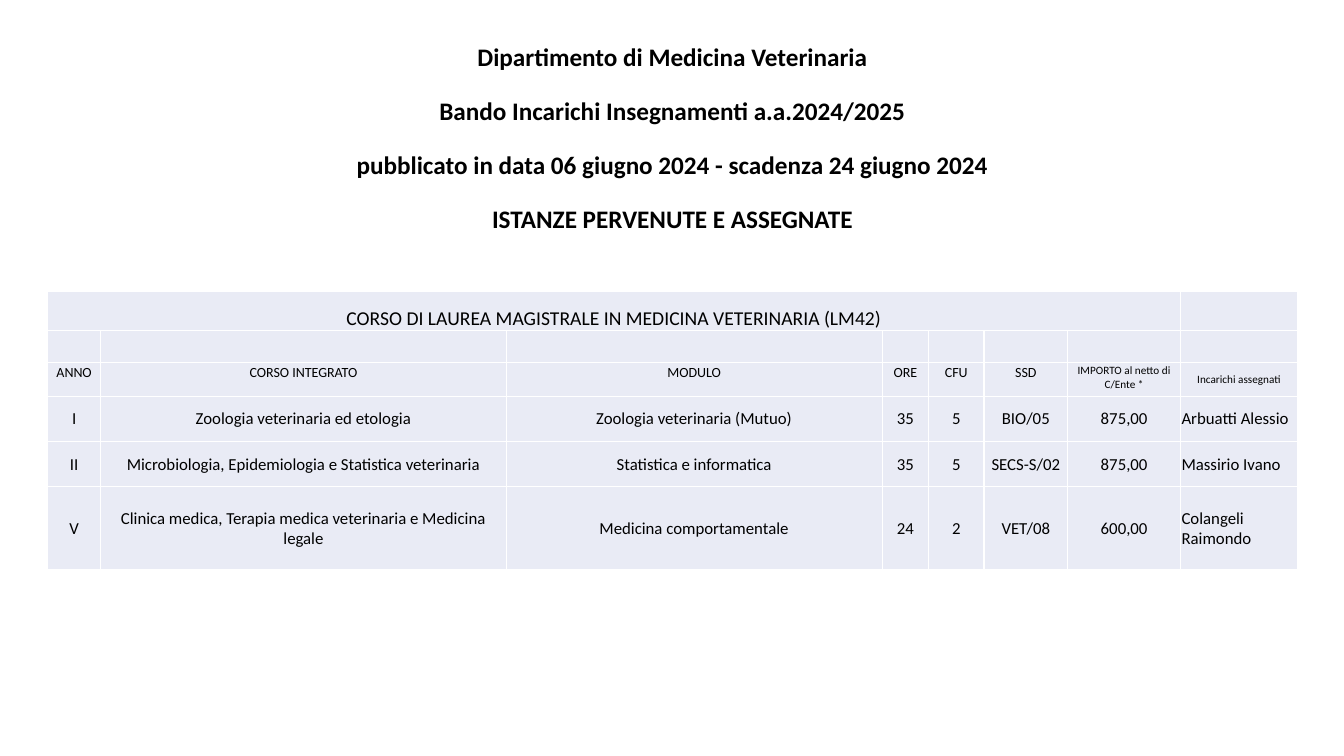
from lxml.etree import SubElement
from pptx import Presentation
from pptx.dml.color import RGBColor
from pptx.enum.text import MSO_ANCHOR, PP_ALIGN
from pptx.oxml import parse_xml
from pptx.oxml.ns import nsdecls, qn
from pptx.util import Inches, Pt

TITLE_LINES = [
    "Dipartimento di Medicina Veterinaria",
    "Bando Incarichi Insegnamenti a.a.2024/2025",
    "pubblicato in data 06 giugno 2024 - scadenza 24 giugno 2024",
    "ISTANZE PERVENUTE E ASSEGNATE",
]
COURSE = "CORSO DI LAUREA MAGISTRALE IN MEDICINA VETERINARIA (LM42)"
HEADINGS = ["ANNO", "CORSO INTEGRATO", "MODULO", "ORE", "CFU", "SSD",
            "IMPORTO al netto di C/Ente *", "Incarichi assegnati"]
ASSIGNMENTS = [
    ["I", "Zoologia veterinaria ed etologia", "Zoologia veterinaria (Mutuo)",
     "35", "5", "BIO/05", "875,00", "Arbuatti Alessio"],
    ["II", "Microbiologia, Epidemiologia e Statistica veterinaria",
     "Statistica e informatica", "35", "5", "SECS-S/02", "875,00", "Massirio Ivano"],
    ["V", "Clinica medica, Terapia medica veterinaria e Medicina legale",
     "Medicina comportamentale", "24", "2", "VET/08", "600,00", "Colangeli Raimondo"],
]
COLUMN_WIDTHS = [5.3, 40.2, 37.3, 4.6, 5.5, 8.3, 11.2, 11.6]
ROW_HEIGHTS = [3.9, 3.2, 3.3, 4.5, 4.5, 8.2]
LAST = len(HEADINGS) - 1


def color(value):
    return RGBColor.from_string(value)


def grid(units):
    return Inches(units / 10)


def write(para, text, size=12, bold=False, align=PP_ALIGN.CENTER, font="Calibri", ink="000000"):
    para.alignment = align
    span = para.add_run()
    span.text = text
    span.font.name = font
    span.font.size = Pt(size)
    span.font.bold = bold
    span.font.color.rgb = color(ink)


class Page:
    cell_fill = "E9EBF5"
    border = "FFFFFF"

    def __init__(self, deck):
        self.slide = deck.slides.add_slide(deck.slide_layouts[6])

    def title(self, lines, left, top, width, height, size=18):
        box = self.slide.shapes.add_textbox(grid(left), grid(top), grid(width), grid(height))
        frame = box.text_frame
        frame.word_wrap = True
        for index, line in enumerate(lines):
            para = frame.paragraphs[0] if index == 0 else frame.add_paragraph()
            para.line_spacing = 0.9
            para.space_before = Pt(19.3 if index else 0)
            write(para, line, size=size, bold=True)

    def table(self, left, top, widths, heights):
        table = self.slide.shapes.add_table(
            len(heights), len(widths), grid(left), grid(top),
            grid(sum(widths)), grid(sum(heights))).table
        table.first_row = False
        table.horz_banding = False
        for column, width in zip(table.columns, widths):
            column.width = grid(width)
        for row, height in zip(table.rows, heights):
            row.height = grid(height)
        for cell in table.iter_cells():
            self.style_cell(cell)
        return table

    def style_cell(self, cell):
        cell.margin_left = cell.margin_right = cell.margin_top = Inches(0.01)
        cell.margin_bottom = 0
        cell.fill.solid()
        cell.fill.fore_color.rgb = color(self.cell_fill)
        properties = cell._tc.get_or_add_tcPr()
        for index, side in enumerate(["lnL", "lnR", "lnT", "lnB"]):
            line = parse_xml(f'<a:{side} {nsdecls("a")} w="{Pt(1)}"/>')
            fill = SubElement(line, qn("a:solidFill"))
            SubElement(fill, qn("a:srgbClr"), val=self.border)
            properties.insert(index, line)

    def fill_cell(self, cell, text, anchor=MSO_ANCHOR.MIDDLE, **style):
        cell.vertical_anchor = anchor
        write(cell.text_frame.paragraphs[0], text, **style)


def main():
    deck = Presentation()
    deck.slide_width = Inches(13.33)
    deck.slide_height = Inches(7.5)
    page = Page(deck)
    page.title(TITLE_LINES, 4, 3.9, 125.4, 19.7)

    table = page.table(4.7, 28.9, COLUMN_WIDTHS, ROW_HEIGHTS)
    table.cell(0, 0).merge(table.cell(0, LAST - 1))
    page.fill_cell(table.cell(0, 0), COURSE, anchor=MSO_ANCHOR.BOTTOM, size=14)
    for column, heading in enumerate(HEADINGS):
        page.fill_cell(table.cell(2, column), heading,
                       anchor=MSO_ANCHOR.MIDDLE if column == LAST else MSO_ANCHOR.TOP,
                       size=8 if column >= LAST - 1 else 10)
    for row, assignment in enumerate(ASSIGNMENTS, start=3):
        for column, text in enumerate(assignment):
            page.fill_cell(table.cell(row, column), text,
                           align=PP_ALIGN.LEFT if column == LAST else PP_ALIGN.CENTER)
    deck.save("out.pptx")


if __name__ == "__main__":
    main()
